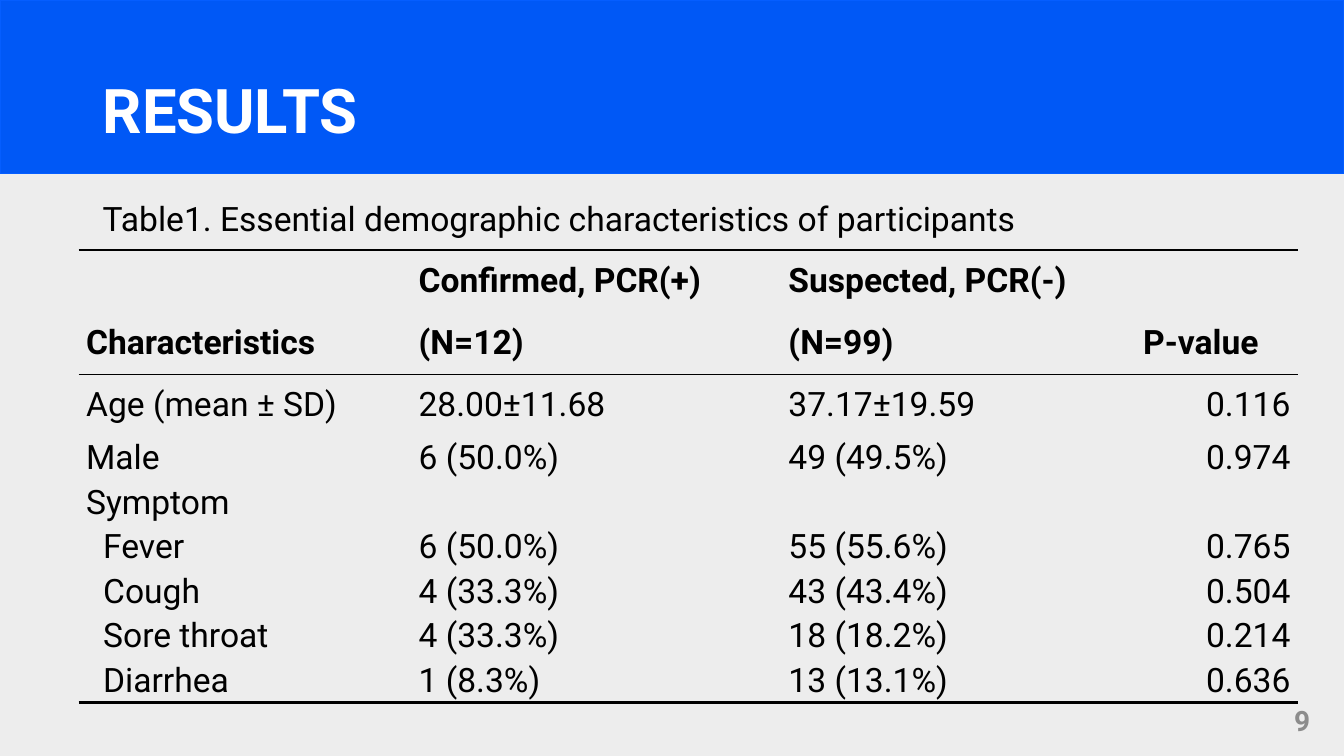
"""Build the results slide with its demographic table."""
from dataclasses import dataclass

from lxml.etree import SubElement
from pptx import Presentation
from pptx.dml.color import RGBColor
from pptx.enum.shapes import MSO_SHAPE as Shape
from pptx.enum.text import MSO_ANCHOR as Anchor, PP_ALIGN as Align
from pptx.oxml.ns import qn
from pptx.slide import Slide
from pptx.table import _Cell as Cell
from pptx.text.text import TextFrame
from pptx.util import Cm, Pt


@dataclass(frozen=True)
class Theme:
    """Colours, font and sizes of the slide."""
    font: str = "Roboto"
    page: str = "EDEDED"
    band: str = "0058F6"
    band_line: str = "055EFF"
    ink: str = "000000"
    light: str = "FFFFFF"
    muted: str = "8C8C8C"
    title_size: float = 44
    body_size: float = 24
    number_size: float = 20
    thick: float = 2.25
    thin: float = 1


@dataclass(frozen=True)
class Label:
    """A text box with its place in centimetres and its look."""
    text: str
    box: tuple[float, float, float, float]
    size: float
    color: str
    bold: bool = False
    align: Align = Align.LEFT
    anchor: Anchor = Anchor.MIDDLE
    spacing: float = 1.0


@dataclass(frozen=True)
class Row:
    """A table row with its height and indent in centimetres and its rules in points."""
    texts: tuple[str, ...]
    height: float = 1.12
    bold: bool = False
    indent: float = 0
    top: float = 0
    bottom: float = 0


THEME = Theme()
LABELS = (
    Label("RESULTS", (2.34, 1.02, 29.21, 3.68), THEME.title_size, THEME.light,
          bold=True, spacing=0.9),
    Label("9", (25.65, 17.65, 7.62, 1.02), THEME.number_size, THEME.muted,
          bold=True, align=Align.RIGHT),
    Label("Table1. Essential demographic characteristics of participants",
          (2.34, 4.85, 27.94, 1.27), THEME.body_size, THEME.ink, anchor=Anchor.TOP),
)
COLUMN_WIDTHS = (8.38, 9.32, 8.94, 4.09)
CELL_MARGIN = 0.19
SYMPTOM_INDENT = 0.43
ROWS = (
    Row(("", "Confirmed, PCR(+)", "Suspected, PCR(-)", ""), 1.57, bold=True, top=THEME.thick),
    Row(("Characteristics", "(N=12)", "(N=99)", "P-value"), 1.57, bold=True, bottom=THEME.thin),
    Row(("Age (mean ± SD)", "28.00±11.68", "37.17±19.59", "0.116"), 1.55, top=THEME.thin),
    Row(("Male", "6 (50.0%)", "49 (49.5%)", "0.974")),
    Row(("Symptom",)),
    Row(("Fever", "6 (50.0%)", "55 (55.6%)", "0.765"), indent=SYMPTOM_INDENT),
    Row(("Cough", "4 (33.3%)", "43 (43.4%)", "0.504"), indent=SYMPTOM_INDENT),
    Row(("Sore throat", "4 (33.3%)", "18 (18.2%)", "0.214"), indent=SYMPTOM_INDENT),
    Row(("Diarrhea", "1 (8.3%)", "13 (13.1%)", "0.636"), indent=SYMPTOM_INDENT,
        bottom=THEME.thick),
)


def write(tf: TextFrame, text: str, size: float, color: str, bold: bool,
          align: Align, spacing: float = 1.0) -> None:
    """Write one formatted line into a text frame."""
    p = tf.paragraphs[0]
    p.alignment, p.line_spacing = align, spacing
    r = p.add_run()
    r.text = text
    for name, value in {"name": THEME.font, "size": Pt(size), "bold": bold}.items():
        setattr(r.font, name, value)
    r.font.color.rgb = RGBColor.from_string(color)


def add_band(s: Slide, width: int) -> None:
    """Draw the title band across the slide."""
    band = s.shapes.add_shape(Shape.RECTANGLE, 0, 0, width, Cm(4.37))
    band.shadow.inherit = False
    band.fill.solid()
    band.fill.fore_color.rgb = RGBColor.from_string(THEME.band)
    band.line.color.rgb = RGBColor.from_string(THEME.band_line)
    band.line.width = Pt(THEME.thin)


def add_label(s: Slide, label: Label) -> None:
    """Draw one text box."""
    tf = s.shapes.add_textbox(*map(Cm, label.box)).text_frame
    tf.word_wrap = True
    tf.vertical_anchor = label.anchor
    write(tf, label.text, label.size, label.color, label.bold, label.align, label.spacing)


def set_borders(cell: Cell, top: float, bottom: float) -> None:
    """Rule a cell above and below and leave its sides open."""
    props = cell._tc.get_or_add_tcPr()
    for side, width in {"lnL": 0, "lnR": 0, "lnT": top, "lnB": bottom}.items():
        line = SubElement(props, qn(f"a:{side}"), w=str(Pt(width)))
        if width:
            fill = SubElement(line, qn("a:solidFill"))
            SubElement(fill, qn("a:srgbClr"), val=THEME.ink)
        else:
            SubElement(line, qn("a:noFill"))


def add_demographics(s: Slide) -> None:
    """Draw the table of participant characteristics."""
    frame = s.shapes.add_table(len(ROWS), len(COLUMN_WIDTHS), Cm(1.98), Cm(6.3),
                               Cm(sum(COLUMN_WIDTHS)), Cm(sum(row.height for row in ROWS)))
    table = frame.table
    table.first_row = table.horz_banding = False
    for column, width in zip(table.columns, COLUMN_WIDTHS):
        column.width = Cm(width)
    last = len(COLUMN_WIDTHS) - 1
    for i, row in enumerate(ROWS):
        table.rows[i].height = Cm(row.height)
        if len(row.texts) == 1:
            table.cell(i, 0).merge(table.cell(i, last))
        for j in range(last + 1):
            cell = table.cell(i, j)
            set_borders(cell, row.top, row.bottom)
            cell.fill.background()
            layout = {
                "vertical_anchor": Anchor.MIDDLE,
                "margin_left": Cm(CELL_MARGIN + (row.indent if j == 0 else 0)),
                "margin_right": Cm(CELL_MARGIN),
                "margin_top": 0,
                "margin_bottom": 0,
            }
            for name, value in layout.items():
                setattr(cell, name, value)
            if j < len(row.texts) and row.texts[j]:
                align = Align.RIGHT if j == last and not row.bold else Align.LEFT
                write(cell.text_frame, row.texts[j], THEME.body_size, THEME.ink,
                      row.bold, align)


def main() -> None:
    """Build and save the slide."""
    prs = Presentation()
    prs.slide_width, prs.slide_height = Cm(33.87), Cm(19.05)
    s = prs.slides.add_slide(prs.slide_layouts[6])
    s.background.fill.solid()
    s.background.fill.fore_color.rgb = RGBColor.from_string(THEME.page)
    add_band(s, prs.slide_width)
    add_demographics(s)
    for label in LABELS:
        add_label(s, label)
    prs.save("out.pptx")


if __name__ == "__main__":
    main()
